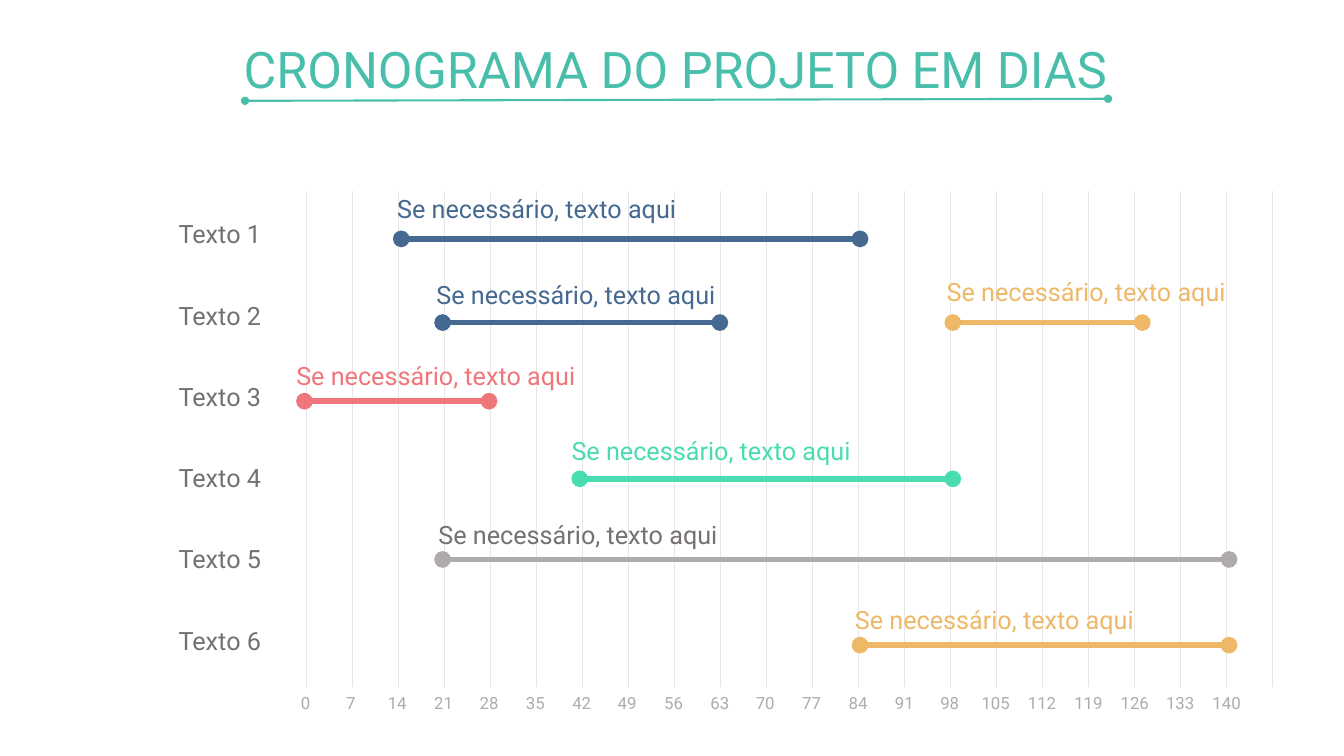
from dataclasses import dataclass

from lxml.etree import SubElement
from pptx import Presentation
from pptx.dml.color import RGBColor
from pptx.enum.shapes import MSO_CONNECTOR
from pptx.enum.text import MSO_ANCHOR, MSO_AUTO_SIZE, PP_ALIGN
from pptx.oxml import parse_xml
from pptx.oxml.ns import nsdecls, qn
from pptx.util import Emu, Pt


@dataclass(frozen=True)
class Theme:
    font: str = "Roboto"
    title: str = "49BEAA"
    grid: str = "E7E6E6"
    label: str = "767171"
    grey: str = "AFABAB"
    blue: str = "456990"
    amber: str = "EEB868"
    coral: str = "EF767A"
    mint: str = "49DCB1"
    title_size: int = 36
    text_size: int = 18
    axis_size: int = 12
    bar_width: float = 4
    rule_width: float = 1.5
    grid_width: float = 1


THEME = Theme()
EMU_PER_PX = 9144  # 100 px to the inch
TASK_NOTE = "Se necessário, texto aqui"

# start x, end x, bar y, note x, note y, bar colour, note colour
TASKS = [
    (398, 853, 237, 384, 187, THEME.blue, THEME.blue),
    (439, 714, 320, 423, 272, THEME.blue, THEME.blue),
    (945, 1133, 320, 929, 269, THEME.amber, THEME.amber),
    (302, 485, 398, 284, 353, THEME.coral, THEME.coral),
    (575, 945, 475, 557, 427, THEME.mint, THEME.mint),
    (439, 1219, 555, 425, 510, THEME.grey, THEME.label),
    (853, 1219, 640, 838, 595, THEME.amber, THEME.amber),
]


def px(n):
    return Emu(n * EMU_PER_PX)


def write(tf, text, *, size, color, font, align=PP_ALIGN.LEFT):
    p = tf.paragraphs[0]
    p.alignment = align
    r = p.add_run()
    r.text = text
    r.font.name = font
    r.font.size = Pt(size)
    r.font.color.rgb = RGBColor.from_string(color)


class SlideBuilder:
    def __init__(self, slide, theme):
        self.s = slide
        self.theme = theme

    def title(self, x, y, w, h, text):
        sp = self.s.shapes.title
        sp.left, sp.top, sp.width, sp.height = map(px, (x, y, w, h))
        tf = sp.text_frame
        tf.word_wrap = True
        tf.auto_size = MSO_AUTO_SIZE.NONE
        tf.vertical_anchor = MSO_ANCHOR.MIDDLE
        write(tf, text, size=self.theme.title_size, color=self.theme.title,
              font=self.theme.font, align=PP_ALIGN.CENTER)

    def text(self, x, y, w, h, text, **fmt):
        tf = self.s.shapes.add_textbox(*map(px, (x, y, w, h))).text_frame
        tf.word_wrap = True
        tf.auto_size = MSO_AUTO_SIZE.SHAPE_TO_FIT_TEXT
        write(tf, text, font=self.theme.font, **fmt)

    def dotted_end_line(self, x1, y1, x2, y2, color, width):
        """Draw a straight line with a round dot at both ends."""
        sp = self.s.shapes.add_connector(
            MSO_CONNECTOR.STRAIGHT, *map(px, (x1, y1, x2, y2)))
        sp.line.color.rgb = RGBColor.from_string(color)
        sp.line.width = Pt(width)
        ln = sp.line._get_or_add_ln()
        for end in ("a:headEnd", "a:tailEnd"):
            SubElement(ln, qn(end), type="oval")
        SubElement(sp._element.spPr, qn("a:effectLst"))

    def grid(self, x, y, w, h, rows, cols):
        """Add an empty table that shows only its upright lines."""
        table = self.s.shapes.add_table(rows, cols, *map(px, (x, y, w, h))).table
        table.first_row = table.horz_banding = False
        for col in table.columns:
            col.width = px(w) // cols
        for row in table.rows:
            row.height = px(h) // rows
            for i, cell in enumerate(row.cells):
                cell.fill.background()
                self.cell_borders(cell, {"R"} if i == 0 else {"L", "R"})

    def cell_borders(self, cell, shown):
        tc_pr = cell._tc.get_or_add_tcPr()
        for i, side in enumerate("LRTB"):
            fill = (f'<a:solidFill><a:srgbClr val="{self.theme.grid}"/></a:solidFill>'
                    if side in shown else "<a:noFill/>")
            width = Pt(self.theme.grid_width)
            tc_pr.insert(i, parse_xml(
                f'<a:ln{side} {nsdecls("a")} w="{width}">{fill}</a:ln{side}>'))


def main():
    prs = Presentation()
    prs.slide_width, prs.slide_height = px(1333), px(750)
    s = SlideBuilder(prs.slides.add_slide(prs.slide_layouts[5]), THEME)

    s.grid(258, 189, 1004, 493, rows=6, cols=22)
    s.title(207, 38, 926, 60, "CRONOGRAMA DO PROJETO EM DIAS")

    for week in range(21):
        day = 7 * week
        w = 55 if day >= 100 else 42
        s.text(round(302.5 + 45.7 * week - w / 2), 682, w, 30, str(day),
               size=THEME.axis_size, color=THEME.grey, align=PP_ALIGN.CENTER)

    for i in range(6):
        s.text(137, round(212 + 80.6 * i), 162, 40, f"Texto {i + 1}",
               size=THEME.text_size, color=THEME.label, align=PP_ALIGN.CENTER)

    for start, end, y, note_x, note_y, bar_color, note_color in TASKS:
        s.dotted_end_line(start, y, end, y, bar_color, THEME.bar_width)
        s.text(note_x, note_y, 355, 40, TASK_NOTE,
               size=THEME.text_size, color=note_color)

    s.dotted_end_line(243, 100, 1099, 98, THEME.title, THEME.rule_width)
    prs.save("out.pptx")


if __name__ == "__main__":
    main()
